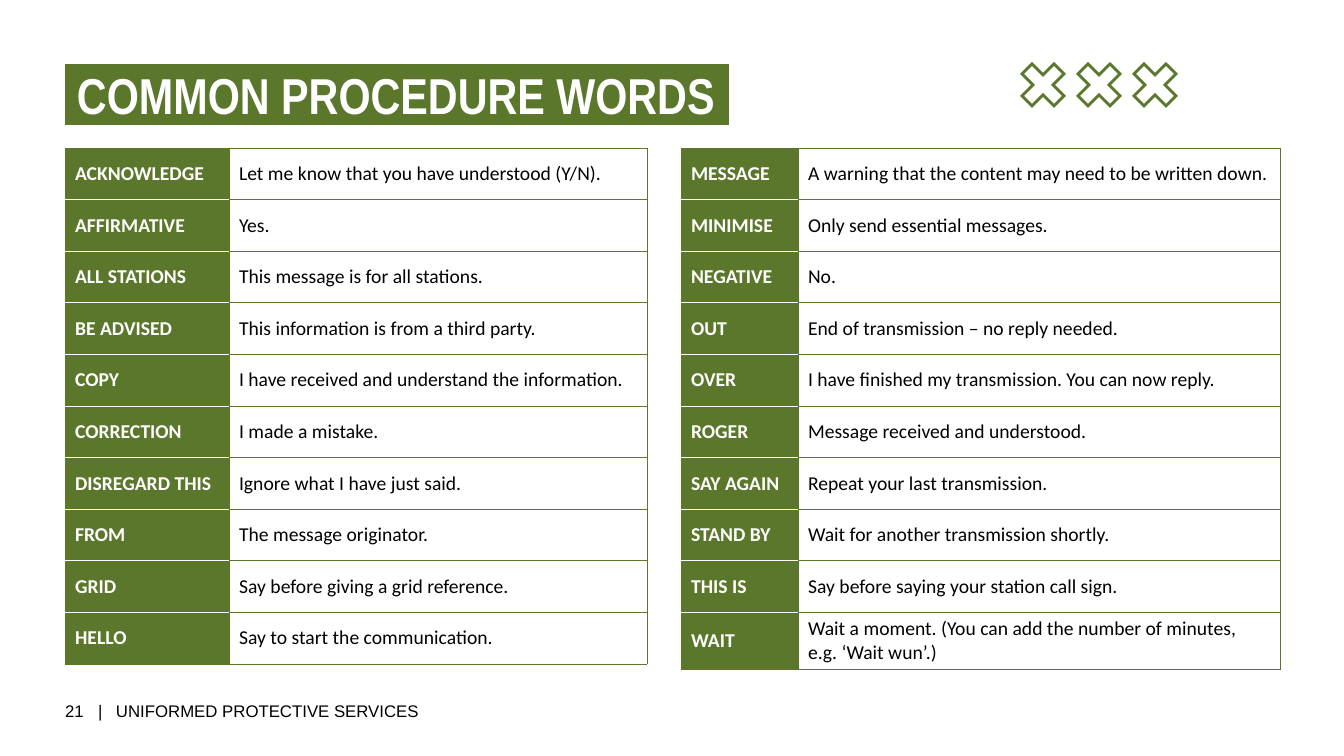
from dataclasses import dataclass

from lxml import etree
from pptx import Presentation
from pptx.dml.color import RGBColor
from pptx.enum.text import MSO_ANCHOR as Anchor, MSO_AUTO_SIZE as AutoSize, PP_ALIGN as Align
from pptx.oxml.ns import qn
from pptx.slide import Slide
from pptx.table import _Cell as Cell
from pptx.text.text import Font
from pptx.util import Emu, Pt

SLIDE_WIDTH, SLIDE_HEIGHT = 1344, 756
EMU_PER_PX = 12192000 / SLIDE_WIDTH
GREEN, WHITE, BLACK = "5B772B", "FFFFFF", "000000"
LEFT_MARGIN = 65
TABLE_TOP, TABLE_HEIGHT = 148, 516
CROSS_CENTRES, CROSS_MIDDLE = (1043, 1099, 1155), 85
CROSS_QUARTER = ((11, 21), (21, 11), (10, 0))
FOOTER_TABS = (33, 51)


@dataclass(frozen=True)
class WordTable:
    left: int
    word_width: int
    meaning_width: int
    entries: tuple[tuple[str, str], ...]


WORD_TABLES = (
    WordTable(LEFT_MARGIN, 164, 418, (
        ("ACKNOWLEDGE", "Let me know that you have understood (Y/N)."),
        ("AFFIRMATIVE", "Yes."),
        ("ALL STATIONS", "This message is for all stations."),
        ("BE ADVISED", "This information is from a third party."),
        ("COPY", "I have received and understand the information."),
        ("CORRECTION", "I made a mistake."),
        ("DISREGARD THIS", "Ignore what I have just said."),
        ("FROM", "The message originator."),
        ("GRID", "Say before giving a grid reference."),
        ("HELLO", "Say to start the communication."),
    )),
    WordTable(681, 117, 482, (
        ("MESSAGE", "A warning that the content may need to be written down."),
        ("MINIMISE", "Only send essential messages."),
        ("NEGATIVE", "No."),
        ("OUT", "End of transmission – no reply needed."),
        ("OVER", "I have finished my transmission. You can now reply."),
        ("ROGER", "Message received and understood."),
        ("SAY AGAIN", "Repeat your last transmission."),
        ("STAND BY", "Wait for another transmission shortly."),
        ("THIS IS", "Say before saying your station call sign."),
        ("WAIT", "Wait a moment. (You can add the number of minutes, e.g. ‘Wait wun’.)"),
    )),
)


def px(length: int) -> Emu:
    return Emu(round(length * EMU_PER_PX))


def rgb(colour: str) -> RGBColor:
    return RGBColor.from_string(colour)


def style_font(font: Font, name: str, size: int, colour: str, bold: bool = False) -> None:
    font.name, font.size, font.bold = name, Pt(size), bold
    font.color.rgb = rgb(colour)


def add_title(slide: Slide) -> None:
    title = slide.shapes.title
    title.left, title.top, title.width, title.height = map(px, (LEFT_MARGIN, 64, 664, 61))
    title.fill.solid()
    title.fill.fore_color.rgb = rgb(GREEN)
    frame = title.text_frame
    frame.text = "COMMON PROCEDURE WORDS"
    frame.word_wrap = False
    frame.auto_size = AutoSize.NONE
    frame.vertical_anchor = Anchor.TOP
    frame.margin_left, frame.margin_right = px(12), px(8)
    frame.margin_top = frame.margin_bottom = 0
    paragraph = frame.paragraphs[0]
    paragraph.alignment = Align.LEFT
    style_font(paragraph.runs[0].font, "Arial Narrow", 36, WHITE, True)


def add_footer(slide: Slide) -> None:
    footer = slide.shapes.add_textbox(px(LEFT_MARGIN), px(701), px(385), px(20))
    frame = footer.text_frame
    frame.text = "21\t|\tUNIFORMED PROTECTIVE SERVICES"
    frame.word_wrap = True
    frame.vertical_anchor = Anchor.MIDDLE
    frame.margin_left = frame.margin_right = frame.margin_top = frame.margin_bottom = 0
    paragraph = frame.paragraphs[0]
    tabs = etree.SubElement(paragraph._p.get_or_add_pPr(), qn("a:tabLst"))
    for position in FOOTER_TABS:
        etree.SubElement(tabs, qn("a:tab"), pos=str(px(position)), algn="l")
    for run in paragraph.runs:
        style_font(run.font, "Arial", 12, BLACK)


def add_borders(cell: Cell, top: str, bottom: str) -> None:
    properties = cell._tc.get_or_add_tcPr()
    for side, colour in (("L", GREEN), ("R", GREEN), ("T", top), ("B", bottom)):
        border = etree.SubElement(properties, qn(f"a:ln{side}"), w=str(Pt(0.5)))
        fill = etree.SubElement(border, qn("a:solidFill"))
        etree.SubElement(fill, qn("a:srgbClr"), val=colour)


def fill_cell(cell: Cell, text: str, fill: str, colour: str, bold: bool) -> None:
    cell.fill.solid()
    cell.fill.fore_color.rgb = rgb(fill)
    cell.vertical_anchor = Anchor.MIDDLE
    cell.text_frame.text = text
    style_font(cell.text_frame.paragraphs[0].runs[0].font, "Calibri", 14, colour, bold)


def add_word_table(slide: Slide, words: WordTable) -> None:
    count = len(words.entries)
    width = px(words.word_width + words.meaning_width)
    table = slide.shapes.add_table(
        count, 2, px(words.left), px(TABLE_TOP), width, px(TABLE_HEIGHT)).table
    table.first_row = table.horz_banding = False
    table.columns[0].width = px(words.word_width)
    table.columns[1].width = px(words.meaning_width)
    for index, (word, meaning) in enumerate(words.entries):
        word_cell, meaning_cell = table.cell(index, 0), table.cell(index, 1)
        add_borders(word_cell, GREEN if index == 0 else WHITE,
                    GREEN if index == count - 1 else WHITE)
        add_borders(meaning_cell, GREEN, GREEN)
        fill_cell(word_cell, word, GREEN, WHITE, True)
        fill_cell(meaning_cell, meaning, WHITE, BLACK, False)


def cross_outline(centre: int) -> list[tuple[int, int]]:
    """Turn the quarter outline through four right angles about the centre."""
    points, quarter = [], CROSS_QUARTER
    for _ in range(4):
        points += [(centre + x, CROSS_MIDDLE + y) for x, y in quarter]
        quarter = [(y, -x) for x, y in quarter]
    return points


def add_crosses(slide: Slide) -> None:
    outlines = [cross_outline(centre) for centre in CROSS_CENTRES]
    builder = slide.shapes.build_freeform(*outlines[0][0], scale=EMU_PER_PX)
    for index, outline in enumerate(outlines):
        if index:
            builder.move_to(*outline[0])
        builder.add_line_segments(outline[1:], close=True)
    crosses = builder.convert_to_shape()
    crosses.shadow.inherit = False
    crosses.fill.background()
    crosses.line.color.rgb = rgb(GREEN)
    crosses.line.width = Pt(2)
    etree.SubElement(crosses.line._get_or_add_ln(), qn("a:miter"), lim="800000")


def main() -> None:
    presentation = Presentation()
    presentation.slide_width, presentation.slide_height = px(SLIDE_WIDTH), px(SLIDE_HEIGHT)
    slide = presentation.slides.add_slide(presentation.slide_layouts[5])
    add_title(slide)
    add_footer(slide)
    for words in WORD_TABLES:
        add_word_table(slide, words)
    add_crosses(slide)
    presentation.save("out.pptx")


if __name__ == "__main__":
    main()
